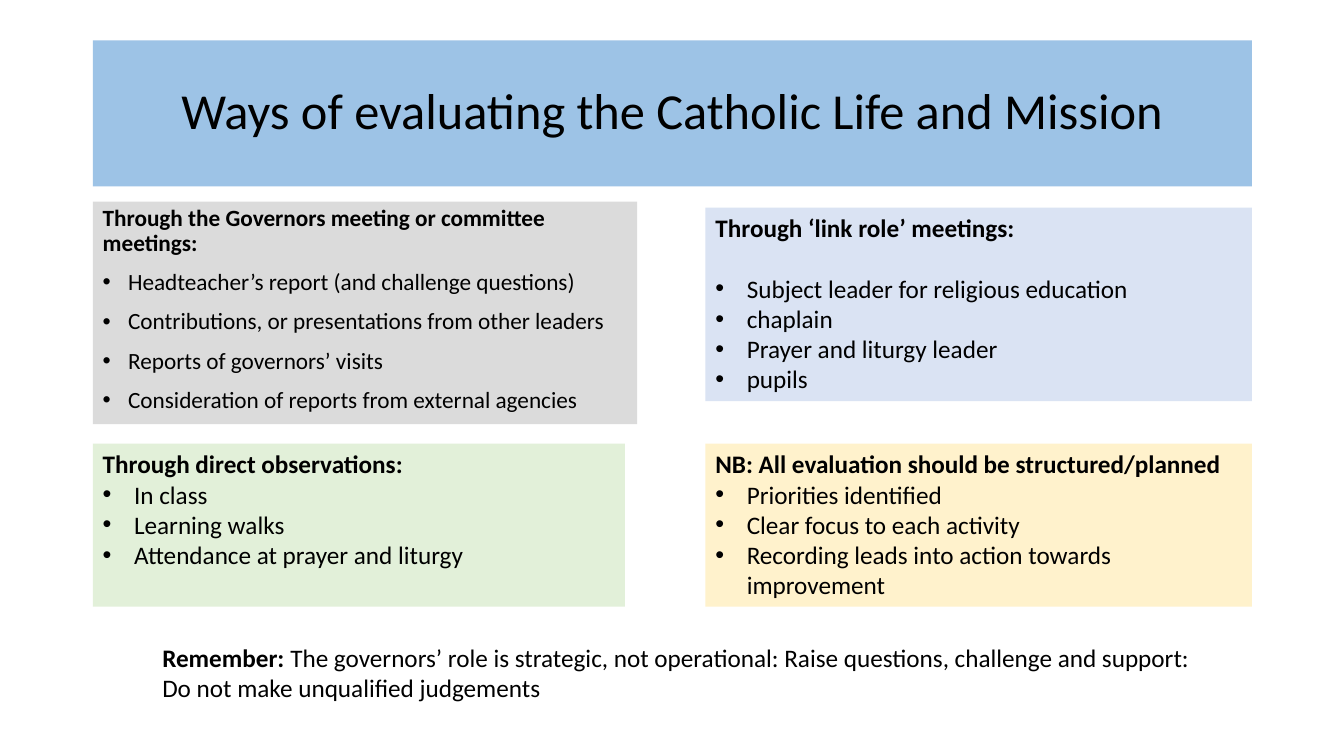
from lxml import etree
from pptx import Presentation
from pptx import util as u
from pptx.dml.color import RGBColor
from pptx.enum import shapes, text
from pptx.oxml.ns import qn

LEFT, RIGHT = 2.34, 17.78
LOWER_TOP, LOWER_HEIGHT = 11.18, 4.11
RIGHT_WIDTH = 13.77


def colour(hex_code):
    return RGBColor.from_string(hex_code)


def format_span(span, size, bold=False):
    span.font.name = "Calibri"
    span.font.size = u.Pt(size)
    span.font.bold = bold
    span.font.color.rgb = colour("000000")


def add_bullet(para, indent):
    """Give a paragraph a round bullet hanging by indent centimetres."""
    properties = para._p.get_or_add_pPr()
    properties.set("marL", str(u.Cm(indent)))
    properties.set("indent", str(-u.Cm(indent)))
    etree.SubElement(properties, qn("a:buFont")).set("typeface", "Arial")
    etree.SubElement(properties, qn("a:buChar")).set("char", "•")


def add_panel(page, place, fill):
    """Add a filled rectangle; place is left, top, width, height in centimetres."""
    box = page.shapes.add_shape(shapes.MSO_SHAPE.RECTANGLE, *map(u.Cm, place))
    box.shadow.inherit = False
    box.fill.solid()
    box.fill.fore_color.rgb = colour(fill)
    box.line.fill.background()
    box.text_frame.word_wrap = True
    return box


def add_title(page, place, fill, title):
    frame = add_panel(page, place, fill).text_frame
    frame.vertical_anchor = text.MSO_ANCHOR.MIDDLE
    para = frame.paragraphs[0]
    para.text = title
    para.alignment = text.PP_ALIGN.CENTER
    para.line_spacing = 0.9
    format_span(para.runs[0], 36)


def add_list_panel(page, place, fill, heading, items, size=18, indent=0.79,
                   line_spacing=1.0, item_gap=0, heading_gap=0):
    """Add a panel with a bold heading and bullets; gaps are in points."""
    frame = add_panel(page, place, fill).text_frame
    frame.vertical_anchor = text.MSO_ANCHOR.TOP
    frame.text = "\n".join([heading, *items])
    for index, para in enumerate(frame.paragraphs):
        para.alignment = text.PP_ALIGN.LEFT
        para.line_spacing = line_spacing
        format_span(para.runs[0], size, bold=index == 0)
        if index == 0:
            para.space_after = u.Pt(heading_gap)
        else:
            para.space_before = u.Pt(item_gap)
            add_bullet(para, indent)


def add_reminder(page, place, label, message):
    frame = page.shapes.add_textbox(*map(u.Cm, place)).text_frame
    frame.word_wrap = True
    para = frame.paragraphs[0]
    for words, bold in ((label, True), (message, False)):
        span = para.add_run()
        span.text = words
        format_span(span, 18, bold)


def main():
    deck = Presentation()
    deck.slide_width, deck.slide_height = u.Cm(33.87), u.Cm(19.05)
    page = deck.slides.add_slide(deck.slide_layouts[6])

    add_title(page, (LEFT, 1.02, 29.21, 3.68), "9DC3E6",
              "Ways of evaluating the Catholic Life and Mission")
    add_list_panel(
        page, (LEFT, 5.08, 13.72, 5.61), "DBDBDB",
        "Through the Governors meeting or committee meetings:",
        ["Headteacher’s report (and challenge questions)",
         "Contributions, or presentations from other leaders",
         "Reports of governors’ visits",
         "Consideration of reports from external agencies"],
        size=16.6, indent=0.64, line_spacing=0.9, item_gap=10)
    add_list_panel(
        page, (RIGHT, 5.23, RIGHT_WIDTH, 4.88), "DAE3F3",
        "Through ‘link role’ meetings:",
        ["Subject leader for religious education", "chaplain",
         "Prayer and liturgy leader", "pupils"],
        heading_gap=21.6)
    add_list_panel(
        page, (LEFT, LOWER_TOP, 13.41, LOWER_HEIGHT), "E2F0D9",
        "Through direct observations:",
        ["In class", "Learning walks", "Attendance at prayer and liturgy"])
    add_list_panel(
        page, (RIGHT, LOWER_TOP, RIGHT_WIDTH, LOWER_HEIGHT), "FFF2CC",
        "NB: All evaluation should be structured/planned",
        ["Priorities identified", "Clear focus to each activity",
         "Recording leads into action towards improvement"])
    add_reminder(
        page, (3.84, 16.05, 26.59, 1.8), "Remember: ",
        "The governors’ role is strategic, not operational: Raise questions, "
        "challenge and support: Do not make unqualified judgements")

    deck.save("out.pptx")


if __name__ == "__main__":
    main()
